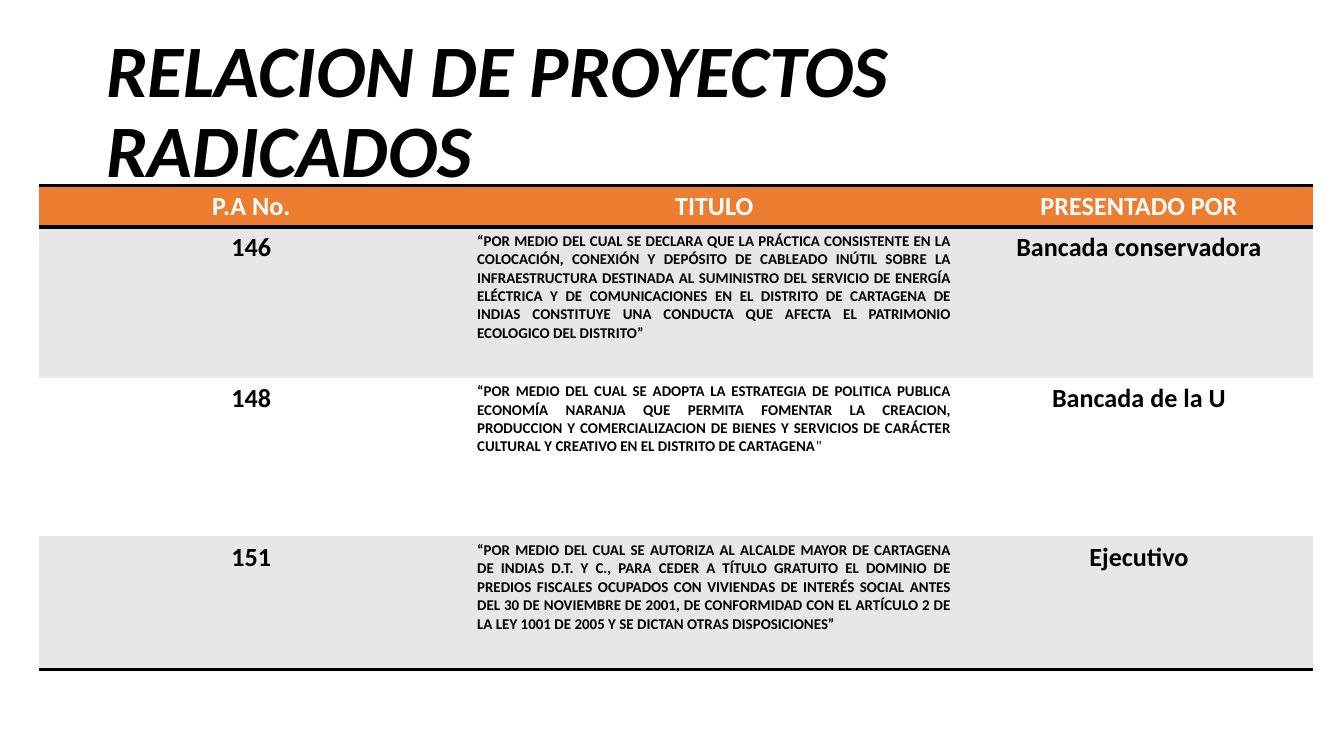
from dataclasses import dataclass

import pptx
import pptx.dml.color
import pptx.enum.text
import pptx.oxml
import pptx.oxml.ns
import pptx.util

SLIDE_WIDTH = pptx.util.Pt(720)
SLIDE_HEIGHT = pptx.util.Pt(405)
GRID_STEPS = 100  # the slide is divided into 100 columns and 100 rows
FONT = "Calibri"
PLAIN_TABLE_STYLE = "{2D5ABB26-0587-4C30-8999-92F81FD0307C}"
COLORS = {
    "ink": "000000",
    "header": "ED7D31",
    "header_text": "FFFFFF",
    "band": "E7E7E7",
    "plain": "FFFFFF",
}
ALIGN = pptx.enum.text.PP_ALIGN


@dataclass(frozen=True)
class Project:
    number: str
    title: str
    sponsor: str
    rows: float
    closing: str = ""


HEADINGS = ("P.A No.", "TITULO", "PRESENTADO POR")
HEADER_ROWS = 5.4
COLUMN_WIDTHS = (31.6, 37.3, 25.9)
PROJECTS = (
    Project(
        "146",
        "“POR MEDIO DEL CUAL SE DECLARA QUE LA PRÁCTICA CONSISTENTE EN LA COLOCACIÓN, "
        "CONEXIÓN Y DEPÓSITO DE CABLEADO INÚTIL SOBRE LA INFRAESTRUCTURA DESTINADA AL "
        "SUMINISTRO DEL SERVICIO DE ENERGÍA ELÉCTRICA Y DE COMUNICACIONES EN EL DISTRITO DE "
        "CARTAGENA DE INDIAS CONSTITUYE UNA CONDUCTA QUE AFECTA EL PATRIMONIO ECOLOGICO DEL "
        "DISTRITO”",
        "Bancada conservadora",
        19.9,
    ),
    Project(
        "148",
        "“POR MEDIO DEL CUAL SE ADOPTA LA ESTRATEGIA DE POLITICA PUBLICA ECONOMÍA NARANJA "
        "QUE PERMITA FOMENTAR LA CREACION, PRODUCCION Y COMERCIALIZACION DE BIENES Y "
        "SERVICIOS DE CARÁCTER CULTURAL Y CREATIVO EN EL DISTRITO DE CARTAGENA",
        "Bancada de la U",
        21,
        closing='"',
    ),
    Project(
        "151",
        "“POR MEDIO DEL CUAL SE AUTORIZA AL ALCALDE MAYOR DE CARTAGENA DE INDIAS D.T. Y C., "
        "PARA CEDER A TÍTULO GRATUITO EL DOMINIO DE PREDIOS FISCALES OCUPADOS CON VIVIENDAS "
        "DE INTERÉS SOCIAL ANTES DEL 30 DE NOVIEMBRE DE 2001, DE CONFORMIDAD CON EL ARTÍCULO "
        "2 DE LA LEY 1001 DE 2005 Y SE DICTAN OTRAS DISPOSICIONES”",
        "Ejecutivo",
        17.6,
    ),
)


def columns(count: float) -> int:
    return round(SLIDE_WIDTH * count / GRID_STEPS)


def rows(count: float) -> int:
    return round(SLIDE_HEIGHT * count / GRID_STEPS)


def write(paragraph, text: str, *, size: float = 14, color: str = "ink", bold: bool = True,
          italic: bool = False, align=ALIGN.CENTER) -> None:
    """Append a formatted run to the paragraph."""
    paragraph.alignment = align
    run = paragraph.add_run()
    run.text = text
    font = run.font
    font.name, font.size = FONT, pptx.util.Pt(size)
    font.bold, font.italic = bold, italic
    font.color.rgb = pptx.dml.color.RGBColor.from_string(COLORS[color])


def format_cell(cell, fill: str, borders: tuple[str, ...]) -> None:
    """Set margins, fill and the named border lines (lnT, lnB) of a cell."""
    cell.margin_left = cell.margin_right = pptx.util.Pt(7.2)
    cell.margin_top = cell.margin_bottom = pptx.util.Pt(2.7)
    cell.fill.solid()
    cell.fill.fore_color.rgb = pptx.dml.color.RGBColor.from_string(COLORS[fill])
    properties = cell._tc.get_or_add_tcPr()
    for position, tag in enumerate(borders):
        properties.insert(position, pptx.oxml.parse_xml(
            f'<a:{tag} {pptx.oxml.ns.nsdecls("a")} w="{pptx.util.Pt(2)}"><a:solidFill>'
            f'<a:srgbClr val="{COLORS["ink"]}"/></a:solidFill></a:{tag}>'
        ))


def add_title(slide) -> None:
    title = slide.shapes.title
    title.left, title.top = columns(6.9), rows(5.3)
    title.width, title.height = columns(86.2), rows(19.4)
    frame = title.text_frame
    frame.word_wrap = True
    frame.auto_size = pptx.enum.text.MSO_AUTO_SIZE.NONE
    frame.vertical_anchor = pptx.enum.text.MSO_ANCHOR.MIDDLE
    paragraph = frame.paragraphs[0]
    paragraph.line_spacing = 0.9
    write(paragraph, "RELACION DE PROYECTOS RADICADOS", size=39.6, italic=True,
          align=ALIGN.LEFT)


def add_project_table(slide) -> None:
    heights = (HEADER_ROWS, *(project.rows for project in PROJECTS))
    frame = slide.shapes.add_table(
        len(heights), len(HEADINGS), columns(2.9), rows(24.5),
        columns(sum(COLUMN_WIDTHS)), rows(sum(heights)),
    )
    table = frame.table
    table._tbl.tblPr.find(pptx.oxml.ns.qn("a:tableStyleId")).text = PLAIN_TABLE_STYLE
    table.horz_banding = False
    for column, width in zip(table.columns, COLUMN_WIDTHS):
        column.width = columns(width)
    for row, height in zip(table.rows, heights):
        row.height = rows(height)

    for cell, heading in zip(table.rows[0].cells, HEADINGS):
        format_cell(cell, "header", ("lnT", "lnB"))
        write(cell.text_frame.paragraphs[0], heading, color="header_text")

    for index, project in enumerate(PROJECTS, start=1):
        cells = list(table.rows[index].cells)
        for cell in cells:
            format_cell(cell, "band" if index % 2 else "plain",
                        ("lnB",) if index == len(PROJECTS) else ())
        number, title, sponsor = (cell.text_frame.paragraphs[0] for cell in cells)
        write(number, project.number)
        write(title, project.title, size=8, align=ALIGN.JUSTIFY)
        if project.closing:
            write(title, project.closing, size=8, bold=False, align=ALIGN.JUSTIFY)
        write(sponsor, project.sponsor)


def main() -> None:
    presentation = pptx.Presentation()
    presentation.slide_width, presentation.slide_height = SLIDE_WIDTH, SLIDE_HEIGHT
    slide = presentation.slides.add_slide(presentation.slide_layouts.get_by_name("Title Only"))
    add_title(slide)
    add_project_table(slide)
    presentation.save("out.pptx")


if __name__ == "__main__":
    main()
